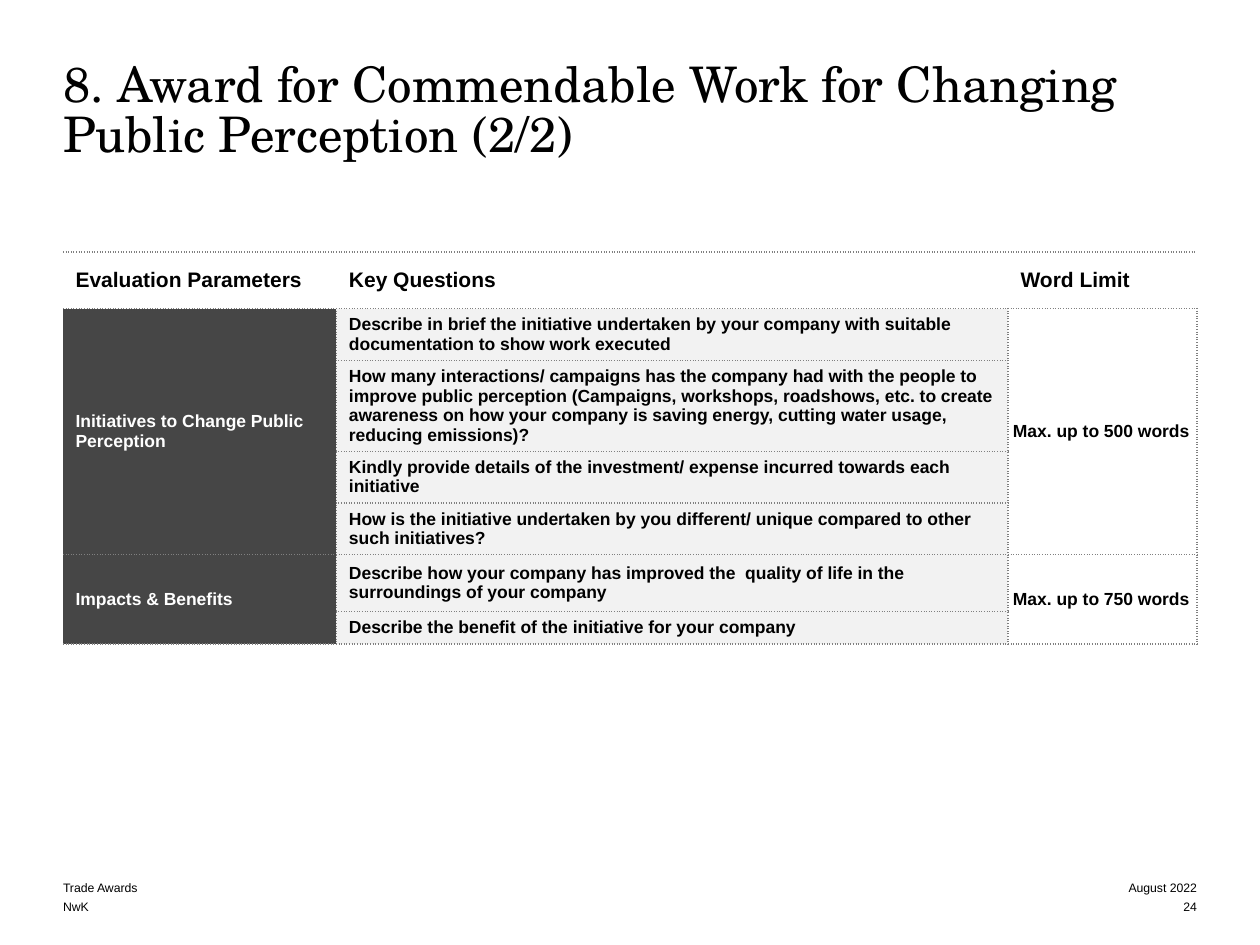
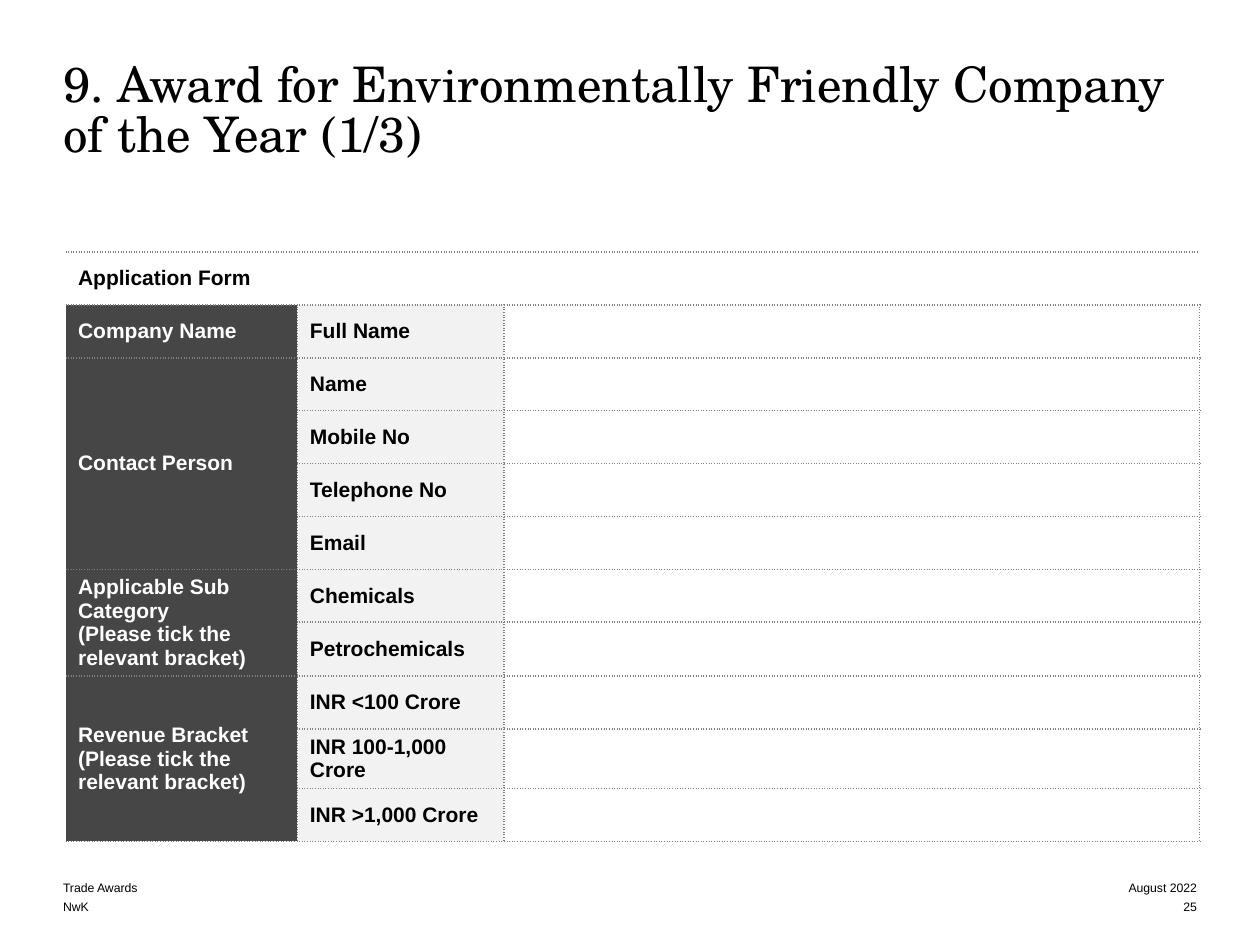
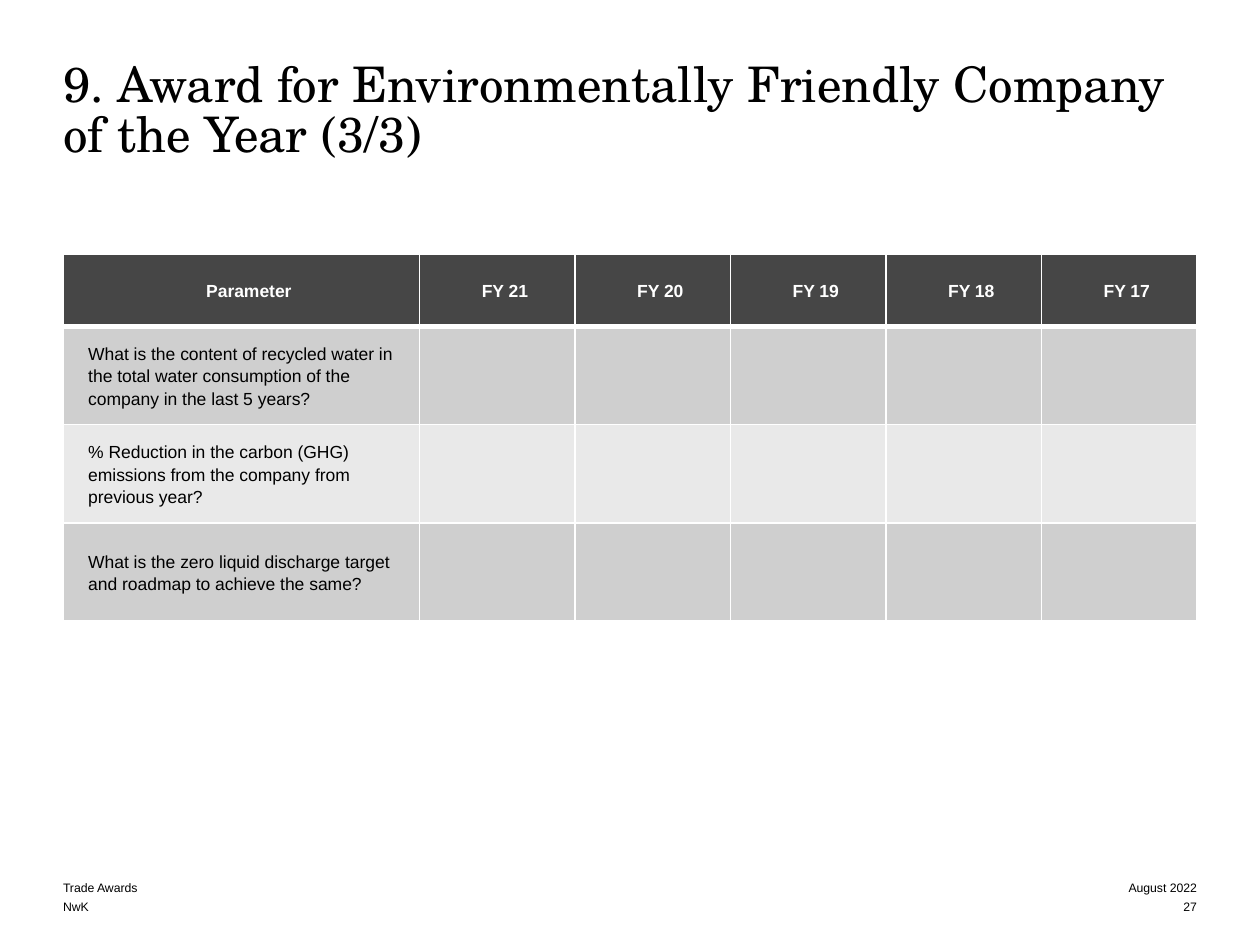
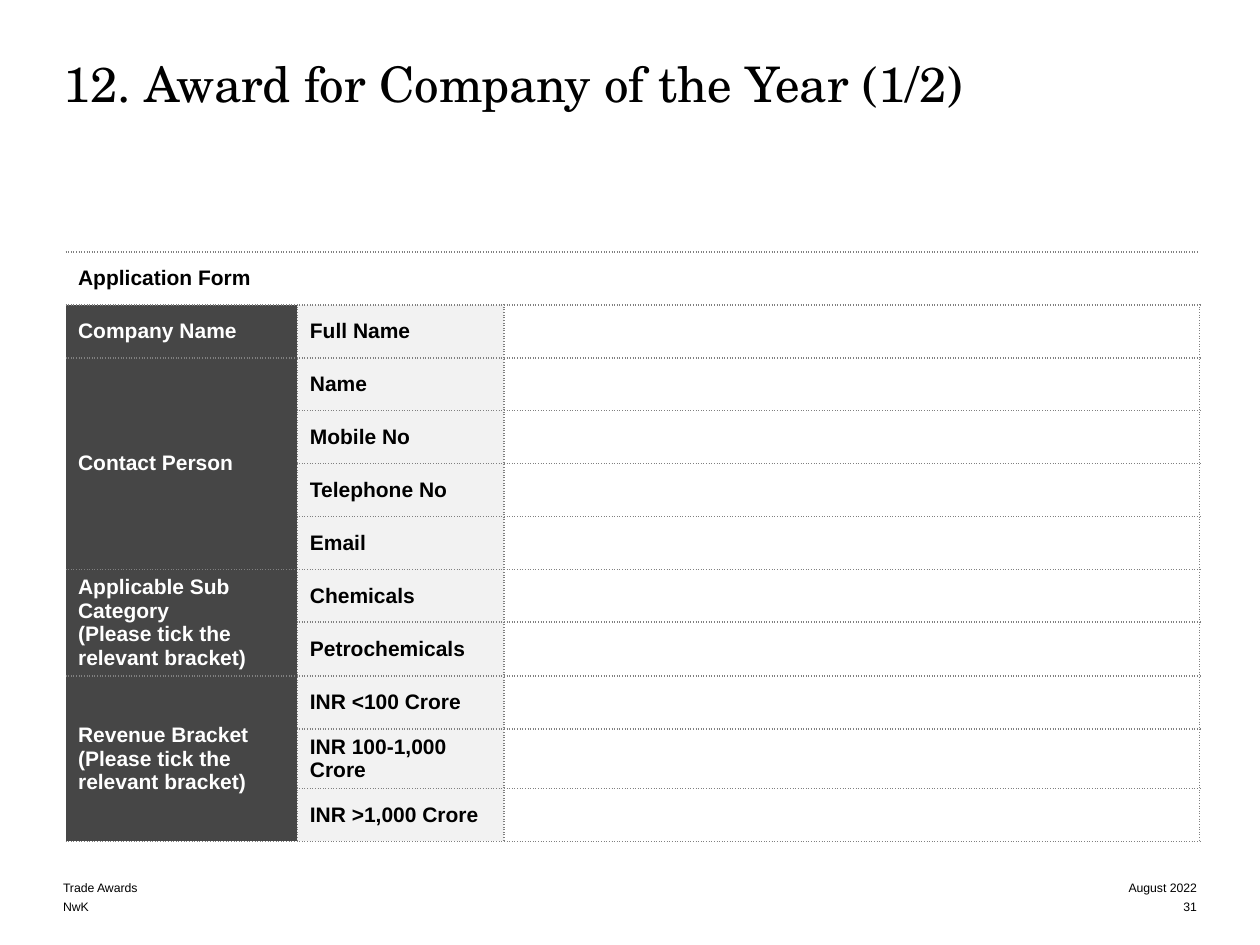
from pptx import Presentation
from pptx.dml.color import RGBColor
from pptx.enum.text import MSO_ANCHOR as Anchor, MSO_AUTO_SIZE as AutoSize, PP_ALIGN as Align
from pptx.oxml import parse_xml
from pptx.oxml.ns import nsdecls
from pptx.util import Inches, Pt

BLACK, WHITE, DARK, DOTTED = "000000", "FFFFFF", "464646", "808080"
PALE, BAND, LIGHT_BAND = "F2F2F2", "CFCFCF", "E9E9E9"
BODY_FONT, TITLE_FONT = "Arial", "TeX Gyre Schola"
MARGIN, CONTENT_WIDTH = 0.5, 9


def format_text(frame, size, colour, font=BODY_FONT, bold=False, align=Align.LEFT):
    for paragraph in frame.paragraphs:
        paragraph.alignment = align
        for run in paragraph.runs:
            run.font.size, run.font.name, run.font.bold = Pt(size), font, bold
            run.font.color.rgb = RGBColor.from_string(colour)


def set_borders(cell, colour, widths, dash):
    """Widths in points for the L, R, T and B sides; 0 hides a side."""
    for position, (side, width) in enumerate(zip("LRTB", widths)):
        paint = (f'<a:solidFill><a:srgbClr val="{colour}"/></a:solidFill>'
                 f'<a:prstDash val="{dash}"/>') if width else "<a:noFill/>"
        line = f'<a:ln{side} {nsdecls("a")} w="{Pt(width)}">{paint}</a:ln{side}>'
        cell._tc.get_or_add_tcPr().insert(position, parse_xml(line))


# Table contents: None continues the cell above, or in the header row the cell to the left
perception_rows = [
    ["Evaluation Parameters", "Key Questions", "Word Limit"],
    ["Initiatives to Change Public Perception",
     "Describe in brief the initiative undertaken by your company with suitable "
     "documentation to show work executed", "Max. up to 500 words"],
    [None, "How many interactions/ campaigns has the company had with the people to improve "
     "public perception (Campaigns, workshops, roadshows, etc. to create awareness on how "
     "your company is saving energy, cutting water usage, reducing emissions)?", None],
    [None, "Kindly provide details of the investment/ expense incurred towards each initiative",
     None],
    [None, "How is the initiative undertaken by you different/ unique compared to other such "
     "initiatives?", None],
    ["Impacts & Benefits", "Describe how your company has improved the  quality of life in the "
     "surroundings of your company", "Max. up to 750 words"],
    [None, "Describe the benefit of the initiative for your company", None],
]
form_rows = [
    ["Application Form", None, None],
    ["Company Name", "Full Name", ""],
    ["Contact Person", "Name", ""],
    [None, "Mobile No", ""],
    [None, "Telephone No", ""],
    [None, "Email", ""],
    ["Applicable Sub Category\n(Please tick the relevant bracket)", "Chemicals", ""],
    [None, "Petrochemicals", ""],
    ["Revenue Bracket\n(Please tick the relevant bracket)", "INR <100 Crore", ""],
    [None, "INR 100-1,000 Crore", ""],
    [None, "INR >1,000 Crore", ""],
]
yearly_rows = [["Parameter"] + [f"FY {year}" for year in range(21, 16, -1)]] + [
    [question] + [""] * 5 for question in (
        "What is the content of recycled water in the total water consumption of the company "
        "in the last 5 years?",
        "% Reduction in the carbon (GHG) emissions from the company from previous year?",
        "What is the zero liquid discharge target and roadmap to achieve the same?")]

# Each table: rows, left, top, column widths, row heights, body text size, yearly look
perception = (perception_rows, MARGIN, 2, [2.17, 5.33, 1.5],
              [0.45, 0.41, 0.72, 0.41, 0.41, 0.45, 0.26], 10, False)
form = (form_rows, 0.52, 2, [1.84, 1.64, 5.52], [0.42] * 9 + [0.47, 0.42], 12, False)
yearly = (yearly_rows, MARGIN, 2.02, [2.83] + [(CONTENT_WIDTH - 2.83) / 5] * 5,
          [0.57] + [0.78] * 3, 10, True)

pages = [
    ("8. Award for Commendable Work for Changing Public Perception (2/2)", 24, perception),
    ("9. Award for Environmentally Friendly Company of the Year (1/3)", 25, form),
    ("9. Award for Environmentally Friendly Company of the Year (3/3)", 27, yearly),
    ("12. Award for Company of the Year (1/2)", 31, form),
]

deck = Presentation()
deck.slide_width, deck.slide_height = Inches(10), Inches(7.5)

for heading, page_number, contents in pages:
    slide = deck.slides.add_slide(deck.slide_layouts[5])

    # Title
    title = slide.shapes.title
    title.left, title.top = Inches(MARGIN), Inches(0.5)
    title.width, title.height = Inches(CONTENT_WIDTH), Inches(1.5)
    title.text_frame.text = heading
    title.text_frame.paragraphs[0].line_spacing = 0.85
    format_text(title.text_frame, 28, BLACK, TITLE_FONT)

    # Footer: two lines at each side
    text_boxes = [title]
    for text, left, width, top, align in (
            ("Trade Awards", MARGIN, 4.35, 6.95, Align.LEFT),
            ("NwK", MARGIN, 4.35, 7.1, Align.LEFT),
            ("August 2022", 8.1, 1.4, 6.95, Align.RIGHT),
            (str(page_number), 8.1, 1.4, 7.1, Align.RIGHT)):
        note = slide.shapes.add_textbox(Inches(left), Inches(top), Inches(width), Inches(0.15))
        note.text_frame.text = text
        format_text(note.text_frame, 7, BLACK, align=align)
        text_boxes.append(note)
    for box in text_boxes:
        frame = box.text_frame
        frame.word_wrap, frame.auto_size = True, AutoSize.NONE
        frame.margin_left = frame.margin_right = frame.margin_top = frame.margin_bottom = 0
        frame.vertical_anchor = Anchor.TOP if box is title else Anchor.BOTTOM

    # Table grid
    rows, left, top, widths, heights, body_size, is_yearly = contents
    table = slide.shapes.add_table(len(rows), len(widths), Inches(left), Inches(top),
                                   Inches(sum(widths)), Inches(sum(heights))).table
    table.first_row = is_yearly
    table.horz_banding = is_yearly
    for column, width in zip(table.columns, widths):
        column.width = Inches(width)
    for row, height in zip(table.rows, heights):
        row.height = Inches(height)

    # Cells
    for r, row in enumerate(rows):
        for c, text in enumerate(row):
            cell = table.cell(r, c)
            is_header, is_last = r == 0, c == len(row) - 1
            cell.vertical_anchor = Anchor.MIDDLE
            if is_yearly:
                fill = DARK if is_header else BAND if r % 2 else LIGHT_BAND
                edges = (1, 1, 3 if r == 1 else 1, 3 if is_header else 1)
                cell.margin_left = cell.margin_right = Inches(0.07 if is_header else 0.08)
                cell.margin_top = cell.margin_bottom = Inches(0 if is_header else 0.05)
            else:
                fill = WHITE if is_header or is_last else PALE if c else DARK
                edges = (0, 0, 1, 1) if is_header else (1 if c else 0, 1, 1, 1)
            cell.fill.solid()
            cell.fill.fore_color.rgb = RGBColor.from_string(fill)
            set_borders(cell, WHITE if is_yearly else DOTTED, edges,
                        "solid" if is_yearly else "sysDot")
            if not text:
                continue

            cell.text_frame.text = text
            format_text(cell.text_frame, 12 if is_header and not is_yearly else body_size,
                        WHITE if fill == DARK else BLACK, bold=is_header or not is_yearly,
                        align=Align.CENTER if is_header and is_yearly else Align.LEFT)
            first = cell.text_frame.paragraphs[0]
            if is_yearly:
                first.line_spacing = 1.15
                first._p.get_or_add_pPr().set("marL", str(Inches(0.12)))
            elif is_last:
                first.space_after = Pt(3)
                if not is_header:
                    cell.margin_left = cell.margin_right = Inches(0.04)
                    cell.margin_top = cell.margin_bottom = Inches(0.04)

            # Merge over the None entries that follow: across in the header, down elsewhere
            last_row, last_column = r, c
            while is_header and last_column + 1 < len(row) and row[last_column + 1] is None:
                last_column += 1
            while not is_header and last_row + 1 < len(rows) and rows[last_row + 1][c] is None:
                last_row += 1
            if (last_row, last_column) != (r, c):
                cell.merge(table.cell(last_row, last_column))

deck.save("out.pptx")
